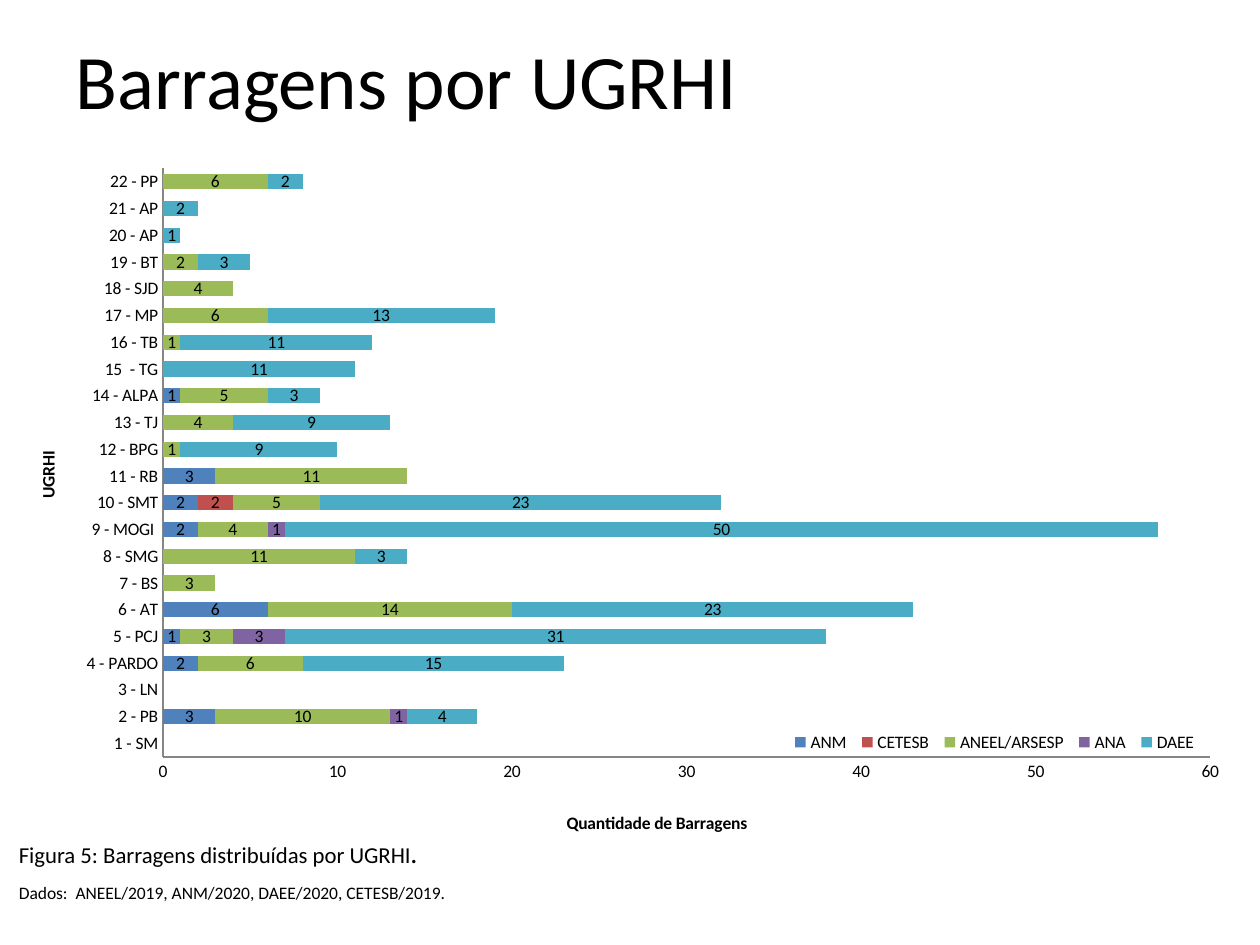
from lxml import etree
from pptx import Presentation
from pptx.chart.data import CategoryChartData
from pptx.dml.color import RGBColor
from pptx.enum.chart import XL_CHART_TYPE as CT, XL_LABEL_POSITION as LP
from pptx.enum.chart import XL_LEGEND_POSITION as LEG, XL_TICK_MARK as TM
from pptx.enum.text import MSO_ANCHOR
from pptx.oxml.ns import qn
from pptx.util import Cm, Pt

FONT = "Calibri"
SERIES = [("ANM", "4F81BD"), ("CETESB", "C0504D"), ("ANEEL/ARSESP", "9BBB59"),
          ("ANA", "8064A2"), ("DAEE", "4BACC6")]
N = None
DAMS = [
    ("1 - SM", N, N, N, N, N),
    ("2 - PB", 3, N, 10, 1, 4),
    ("3 - LN", N, N, N, N, N),
    ("4 - PARDO", 2, N, 6, N, 15),
    ("5 - PCJ", 1, N, 3, 3, 31),
    ("6 - AT", 6, N, 14, N, 23),
    ("7 - BS", N, N, 3, N, N),
    ("8 - SMG", N, N, 11, N, 3),
    ("9 - MOGI ", 2, N, 4, 1, 50),
    ("10 - SMT", 2, 2, 5, N, 23),
    ("11 - RB", 3, N, 11, N, N),
    ("12 - BPG", N, N, 1, N, 9),
    ("13 - TJ", N, N, 4, N, 9),
    ("14 - ALPA", 1, N, 5, N, 3),
    ("15  - TG", N, N, N, N, 11),
    ("16 - TB", N, N, 1, N, 11),
    ("17 - MP", N, N, 6, N, 13),
    ("18 - SJD", N, N, 4, N, N),
    ("19 - BT", N, N, 2, N, 3),
    ("20 - AP", N, N, N, N, 1),
    ("21 - AP", N, N, N, N, 2),
    ("22 - PP", N, N, 6, N, 2),
]
TEXTS = [
    ((1.27, 0, 22.86, 3.18), [("Barragens por UGRHI", 44)]),
    ((0.13, 16.71, 10, 0.94), [("Figura 5: Barragens distribuídas por UGRHI", 13), (".", 16)]),
    ((0.13, 17.55, 11, 0.89), [("Dados:  ANEEL/2019, ANM/2020, DAEE/2020, CETESB/2019.", 10)]),
]


def color(value):
    return RGBColor.from_string(value)


def style(font, size, **extra):
    for key, value in dict(name=FONT, size=Pt(size), **extra).items():
        setattr(font, key, value)
    font.color.rgb = color("000000")


def place(element, index, x, y, w=None, h=None, inner=False):
    for old in element.findall(qn("c:layout")):
        element.remove(old)
    layout = etree.Element(qn("c:layout"))
    manual = etree.SubElement(layout, qn("c:manualLayout"))
    values = dict(layoutTarget="inner" if inner else None,
                  xMode="edge", yMode="edge", x=x, y=y, w=w, h=h)
    for tag, value in values.items():
        if value is not None:
            etree.SubElement(manual, qn(f"c:{tag}")).set("val", str(value))
    element.insert(index, layout)


def add_text(s, box, runs):
    tf = s.shapes.add_textbox(*map(Cm, box)).text_frame
    tf.word_wrap = True
    tf.vertical_anchor = MSO_ANCHOR.MIDDLE
    for text, size in runs:
        r = tf.paragraphs[0].add_run()
        r.text = text
        style(r.font, size)


def format_axis(axis, title, x, y):
    axis.major_tick_mark = axis.minor_tick_mark = TM.NONE
    axis.has_major_gridlines = False
    axis.format.line.color.rgb = color("868686")
    style(axis.tick_labels.font, 10)
    tf = axis.axis_title.text_frame
    tf.text = title
    style(tf.paragraphs[0].runs[0].font, 10, bold=True)
    place(axis.axis_title._element, 1, x, y)
    return tf


def add_dam_chart(s):
    data = CategoryChartData()
    names, *columns = zip(*DAMS)
    data.categories = names
    for (name, _), values in zip(SERIES, columns):
        data.add_series(name, values)
    chart = s.shapes.add_chart(CT.BAR_STACKED, Cm(0.18), Cm(3.1), Cm(24.84), Cm(14.83), data).chart
    chart.has_title = False
    style(chart.font, 10)

    plot = chart.plots[0]
    plot.gap_width, plot.overlap = 75, 100
    for series, (_, fill) in zip(plot.series, SERIES):
        series.format.fill.solid()
        series.format.fill.fore_color.rgb = color(fill)
        labels = series.data_labels
        labels.show_value = True
        labels.position = LP.CENTER
        style(labels.font, 10)

    tf = format_axis(chart.category_axis, "UGRHI", 0.02, 0.4)
    tf._txBody.bodyPr.set("rot", "-5400000")
    tf._txBody.bodyPr.set("vert", "horz")
    axis = chart.value_axis
    format_axis(axis, "Quantidade de Barragens", 0.45, 0.89)
    axis.minimum_scale, axis.maximum_scale, axis.major_unit = 0, 60, 10

    chart.has_legend = True
    legend = chart.legend
    legend.position = LEG.BOTTOM
    legend.include_in_layout = False
    style(legend.font, 10)
    place(legend._element, 1, 0.63, 0.78, 0.34, 0.04)
    place(chart._chartSpace.chart.plotArea, 0, 0.125, 0.02, 0.85, 0.8, inner=True)


def main():
    prs = Presentation()
    prs.slide_width, prs.slide_height = Cm(25.4), Cm(19.05)
    s = prs.slides.add_slide(prs.slide_layouts[6])
    add_dam_chart(s)
    for box, runs in TEXTS:
        add_text(s, box, runs)
    prs.save("out.pptx")


if __name__ == "__main__":
    main()
